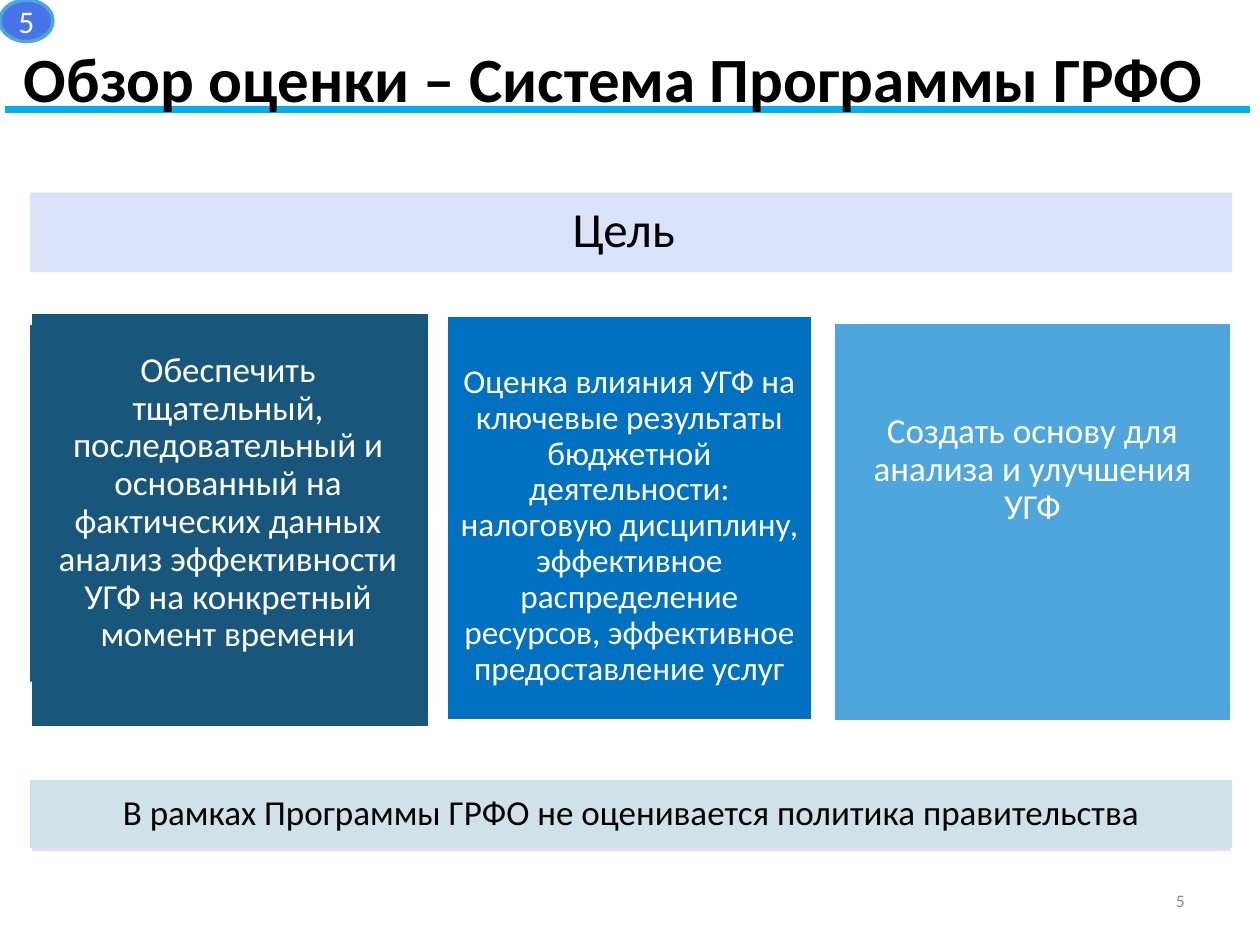
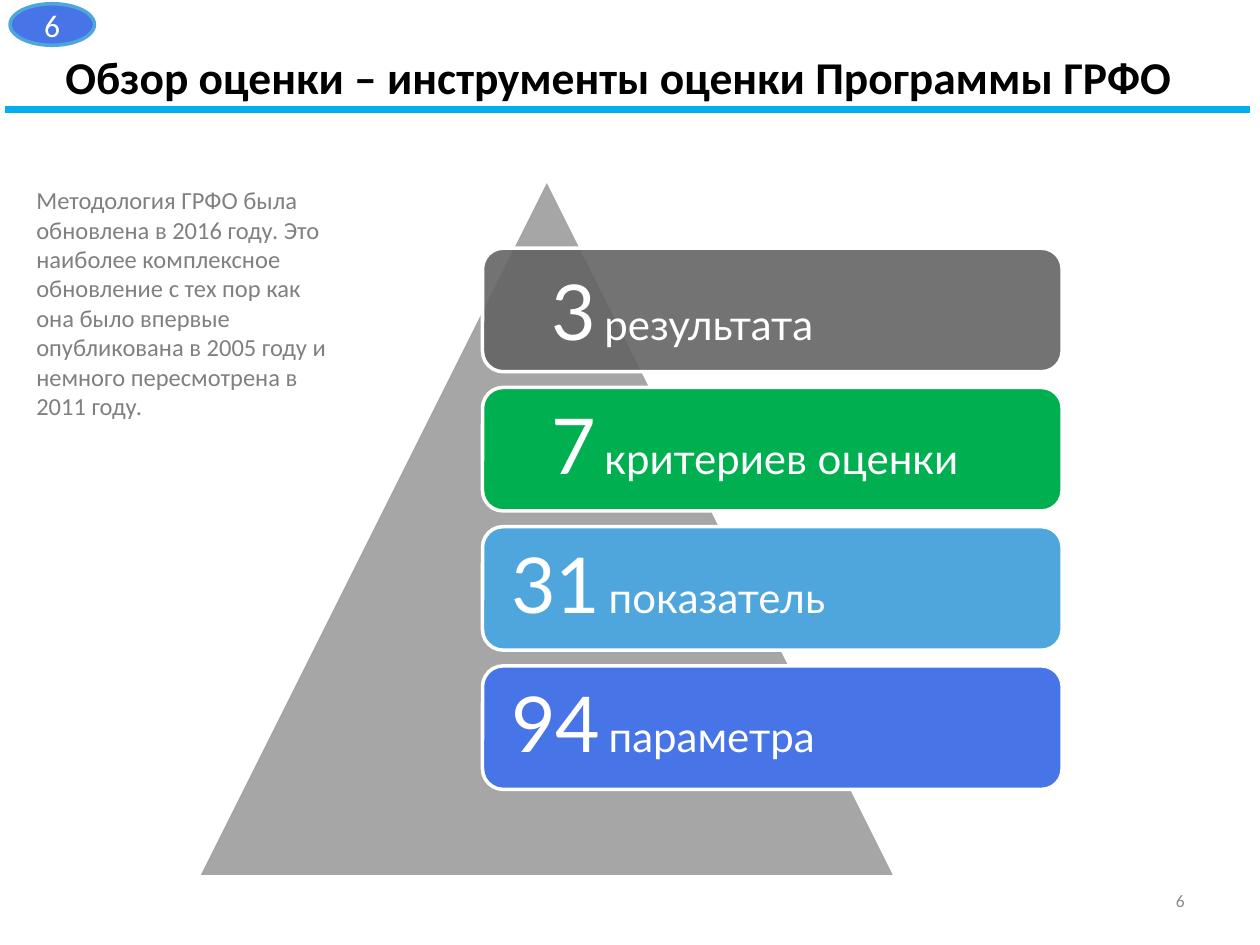
"""Builds two slides on the goal and the assessment tools of the ГРФО programme."""
from lxml import etree
from pptx import Presentation
from pptx.dml.color import RGBColor
from pptx.enum.shapes import MSO_CONNECTOR, MSO_SHAPE
from pptx.enum.text import MSO_ANCHOR, PP_ALIGN
from pptx.oxml.ns import qn
from pptx.util import Inches, Pt

BODY_FONT, LEVEL_FONT = "Calibri", "Lato"
BLACK, WHITE, GREY, PAGE_GREY = "000000", "FFFFFF", "808080", "8C8C8C"
RULE, BADGE, SKY = "00AFEF", "4775E7", "4EA6DC"

GOAL_SLIDE = {
    "number": "5",
    "title": ("Обзор оценки – Система Программы ГРФО", 36, (0.19, 0.31, 9.65, 0.61), 0),
    "badge": (0, 0, 0.42, 0.33),
}
TOOLS_SLIDE = {
    "number": "6",
    "title": ("Обзор оценки – инструменты оценки Программы ГРФО", 26, (0.42, 0.34, 9.06, 0.54), 0.1),
    "badge": (0.08, 0.03, 0.67, 0.33),
}

GOAL = "Цель"
# (text, size, colour, panel box, text box, text fill, inset)
GOALS = [
    ("Обеспечить тщательный, последовательный и основанный на фактических данных "
     "анализ эффективности УГФ на конкретный момент времени",
     20, "19567C", (0.24, 2.48, 3.17, 3.3), (0.24, 2.58, 3.14, 2.83), "19567C", 0.11),
    ("Оценка влияния УГФ на ключевые результаты бюджетной деятельности: налоговую "
     "дисциплину, эффективное распределение ресурсов, эффективное предоставление услуг",
     19, "0070C0", (3.54, 2.5, 2.91, 3.22), (3.54, 3.15, 2.91, 2.05), None, 0.1),
    ("Создать основу для анализа и улучшения УГФ",
     20, SKY, (6.61, 2.56, 3.17, 3.17), (6.61, 2.84, 3.17, 1.78), None, 0.1),
]
LIMIT = "В рамках Программы ГРФО не оценивается политика правительства"
BAND_LEFT, BAND_WIDTH = 0.24, 9.54

# (count, label, fill, opacity in percent, line spacing)
LEVELS = [
    ("3", "результата", "646464", 90, 1.0),
    ("7", "критериев оценки", "00B050", 100, 0.9),
    ("31", "показатель", SKY, 100, 0.9),
    ("94", "параметра", BADGE, 100, 0.9),
]
LEVEL_LEFT, LEVEL_TOP, LEVEL_WIDTH, LEVEL_HEIGHT, LEVEL_PITCH = 3.83, 1.97, 4.6, 0.98, 1.105
LEVEL_INSET, DIGIT_INDENT = 0.18, 0.32
METHODOLOGY = ("Методология ГРФО была обновлена в 2016 году. Это наиболее комплексное "
               "обновление с тех пор как она было впервые опубликована в 2005 году и "
               "немного пересмотрена в 2011 году.")


def rgb(colour):
    """Turn a hex string into a colour."""
    return RGBColor.from_string(colour)


def add_panel(slide, kind, box, fill, line=None, opacity=100):
    """Add a flat preset shape, with an outline if a colour is given."""
    panel = slide.shapes.add_shape(kind, *map(Inches, box))
    panel.shadow.inherit = False
    panel.fill.solid()
    panel.fill.fore_color.rgb = rgb(fill)
    if opacity < 100:
        tint = panel.fill._xPr.find(qn("a:solidFill"))[0]
        etree.SubElement(tint, qn("a:alpha"), val=str(opacity * 1000))
    if line:
        panel.line.color.rgb = rgb(line)
        panel.line.width = Pt(2)
    else:
        panel.line.fill.background()
    return panel


def write(shape, runs, colour, align=PP_ALIGN.LEFT, anchor=MSO_ANCHOR.MIDDLE,
          insets=(0.1, 0.05), spacing=1.0, font=BODY_FONT, bold=False):
    """Write one paragraph of (text, size) runs into a shape."""
    frame = shape.text_frame
    frame.word_wrap = True
    frame.vertical_anchor = anchor
    frame.margin_left = frame.margin_right = Inches(insets[0])
    frame.margin_top = frame.margin_bottom = Inches(insets[1])
    paragraph = frame.paragraphs[0]
    paragraph.alignment = align
    paragraph.line_spacing = spacing
    for text, size in runs:
        run = paragraph.add_run()
        run.text = text
        run.font.name = font
        run.font.size = Pt(size)
        run.font.bold = bold
        run.font.color.rgb = rgb(colour)
    return frame


def add_text(slide, box, runs, colour, **style):
    """Add a text box with one paragraph."""
    write(slide.shapes.add_textbox(*map(Inches, box)), runs, colour, **style)


def add_base(deck, number, title, badge):
    """Add a slide with the rule, page number, title and number badge."""
    slide = deck.slides.add_slide(deck.slide_layouts[6])
    rule = slide.shapes.add_connector(
        MSO_CONNECTOR.STRAIGHT, Inches(0.04), Inches(0.87), Inches(9.92), Inches(0.87))
    rule.line.color.rgb = rgb(RULE)
    rule.line.width = Pt(3.6)
    etree.SubElement(rule._element.spPr, qn("a:effectLst"))
    add_text(slide, (9.11, 6.95, 0.39, 0.4), [(number, 10)], PAGE_GREY, align=PP_ALIGN.RIGHT)
    text, size, box, inset = title
    add_text(slide, box, [(text, size)], BLACK, anchor=MSO_ANCHOR.TOP,
             insets=(inset, inset / 2), bold=True)
    write(add_panel(slide, MSO_SHAPE.OVAL, badge, BADGE, SKY), [(number, 18)], WHITE,
          align=PP_ALIGN.CENTER, insets=(0, 0))
    return slide


def add_goals(slide):
    """Add the goal band, the three goal panels and the closing band."""
    for text, size, fill, box, text_box, text_fill, inset in GOALS:
        add_panel(slide, MSO_SHAPE.RECTANGLE, box, fill, WHITE)
        if text_fill:
            holder = add_panel(slide, MSO_SHAPE.RECTANGLE, text_box, text_fill)
        else:
            holder = slide.shapes.add_textbox(*map(Inches, text_box))
        write(holder, [(text, size)], WHITE, align=PP_ALIGN.CENTER,
              insets=(inset, inset), spacing=0.9)
    add_panel(slide, MSO_SHAPE.RECTANGLE, (BAND_LEFT, 6.23, BAND_WIDTH, 0.54), "F4D5F5", WHITE)
    limit = add_panel(slide, MSO_SHAPE.RECTANGLE, (BAND_LEFT, 6.19, BAND_WIDTH, 0.54), "CFE2E9")
    write(limit, [(LIMIT, 20)], BLACK, align=PP_ALIGN.CENTER, insets=(0.08, 0.08), spacing=0.9)
    add_panel(slide, MSO_SHAPE.RECTANGLE, (BAND_LEFT, 1.53, BAND_WIDTH, 0.63), "DAE3FA")
    add_text(slide, (0.6, 1.53, 8.7, 0.57), [(GOAL, 28)], BLACK,
             align=PP_ALIGN.CENTER, anchor=MSO_ANCHOR.TOP)


def add_pyramid(slide):
    """Add the pyramid with its levels and the note on the methodology."""
    add_panel(slide, MSO_SHAPE.ISOSCELES_TRIANGLE, (1.57, 1.42, 5.54, 5.54), "A6A6A6", WHITE)
    for row, (count, label, fill, opacity, spacing) in enumerate(LEVELS):
        box = (LEVEL_LEFT, LEVEL_TOP + row * LEVEL_PITCH, LEVEL_WIDTH, LEVEL_HEIGHT)
        level = add_panel(slide, MSO_SHAPE.ROUNDED_RECTANGLE, box, fill, WHITE, opacity)
        frame = write(level, [(count, 44), (" ", 18), (label, 24)], WHITE,
                      insets=(LEVEL_INSET, LEVEL_INSET), spacing=spacing, font=LEVEL_FONT)
        if len(count) == 1:
            frame.margin_left = Inches(LEVEL_INSET + DIGIT_INDENT)
    add_text(slide, (0.19, 1.42, 2.54, 1.99), [(METHODOLOGY, 14)], GREY, anchor=MSO_ANCHOR.TOP)


def main():
    """Build and save the deck."""
    deck = Presentation()
    deck.slide_width, deck.slide_height = Inches(10), Inches(7.5)
    add_goals(add_base(deck, **GOAL_SLIDE))
    add_pyramid(add_base(deck, **TOOLS_SLIDE))
    deck.save("out.pptx")


if __name__ == "__main__":
    main()
